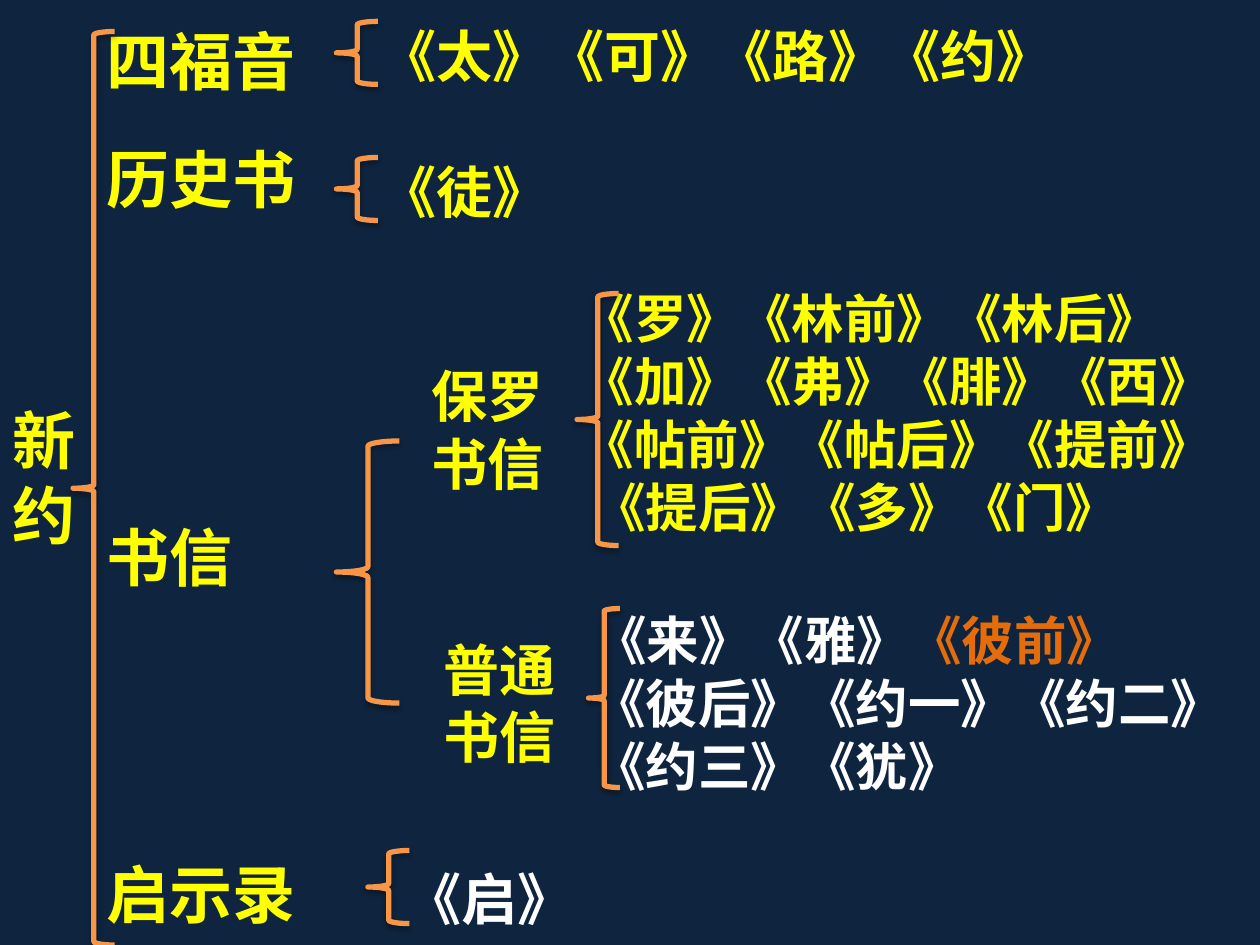
"""Build a slide that groups the New Testament books in a brace tree."""
from lxml import etree
from pptx import Presentation
from pptx.dml.color import RGBColor as RGB
from pptx.enum.shapes import MSO_SHAPE as SHAPE
from pptx.enum.text import MSO_ANCHOR as ANCHOR
from pptx.oxml.ns import qn
from pptx.util import Inches, Pt

COLORS = {"bg": "0F243E", "yellow": "FFFF00", "white": "FFFFFF",
          "orange": "E46C0A", "brace": "F79646"}
FONT = "Noto Sans CJK SC"


def add_run(p, text, size, color):
    r = p.add_run()
    r.text = text
    r.font.color.rgb = RGB.from_string(COLORS[color])
    for name, value in {"size": Pt(size), "bold": True, "name": FONT}.items():
        setattr(r.font, name, value)
    etree.SubElement(r.font._element, qn("a:ea"), typeface=FONT)


def add_text(box, rows):
    tf = s.shapes.add_textbox(*map(Inches, box)).text_frame
    frame = {"word_wrap": True, "vertical_anchor": ANCHOR.MIDDLE,
             "margin_top": Inches(0.07), "margin_bottom": 0}
    for name, value in frame.items():
        setattr(tf, name, value)
    for i, (size, before, indent, runs) in enumerate(rows):
        p = tf.add_paragraph() if i else tf.paragraphs[0]
        p.line_spacing = Pt(size * 1.2)
        if before:
            p.space_before = Pt(before)
        if indent:
            pPr = p._p.get_or_add_pPr()
            pPr.set("marL", str(Inches(indent)))
            pPr.set("indent", "0")
        for text, color in runs:
            add_run(p, text, size, color)


prs = Presentation()
prs.slide_width, prs.slide_height = Inches(10), Inches(7.5)
s = prs.slides.add_slide(prs.slide_layouts[6])
s.background.fill.solid()
s.background.fill.fore_color.rgb = RGB.from_string(COLORS["bg"])

groups = [("四福音", 0), ("历史书", 24), ("书信", 173), ("启示录", 149)]
books = [
    (32, 0, 0, [("《太》《可》《路》《约》", "yellow")]),
    (32, 39, 0, [("《徒》", "yellow")]),
    (30, 35, 1.6, [("《罗》《林前》《林后》", "yellow")]),
    (30, 0, 1.6, [("《加》《弗》《腓》《西》", "yellow")]),
    (30, 0, 1.6, [("《帖前》《帖后》《提前》", "yellow")]),
    (30, 0, 1.69, [("《提后》《多》《门》", "yellow")]),
    (30, 40, 1.7, [("《来》《雅》", "white"), ("《彼前》", "orange")]),
    (30, 0, 1.69, [("《彼后》《约一》《约二》", "white")]),
    (30, 0, 1.69, [("《约三》《犹》", "white")]),
    (32, 39, 0.2, [("《启》", "white")]),
]
add_text((0, 0, 0.83, 7.5), [(36, 0, 0, [("新约", "yellow")])])
add_text((0.75, 0, 2.33, 7.5),
         [(36, before, 0, [(text, "yellow")]) for text, before in groups])
add_text((2.92, 0, 7, 7.5), books)

braces = [
    (0.58, 0.25, 0.33, 7.25),
    (2.92, 6.75, 0.33, 0.58),
    (4.58, 2.33, 0.33, 2),
    (2.67, 0.17, 0.33, 0.5),
    (2.67, 3.5, 0.5, 2.08),
    (2.67, 1.25, 0.33, 0.5),
    (4.67, 4.83, 0.25, 1.42),
]
for box in braces:
    sp = s.shapes.add_shape(SHAPE.LEFT_BRACE, *map(Inches, box))
    sp.fill.background()
    sp.line.color.rgb = RGB.from_string(COLORS["brace"])
    sp.line.width = Pt(3)

add_text((3.33, 2.58, 1.25, 1.58), [(32, 0, 0, [("保罗书信", "yellow")])])
add_text((3.42, 5, 1.25, 1.08),
         [(32, 0, 0, [(text, "yellow")]) for text in ("普通", "书信")])

prs.save("out.pptx")
